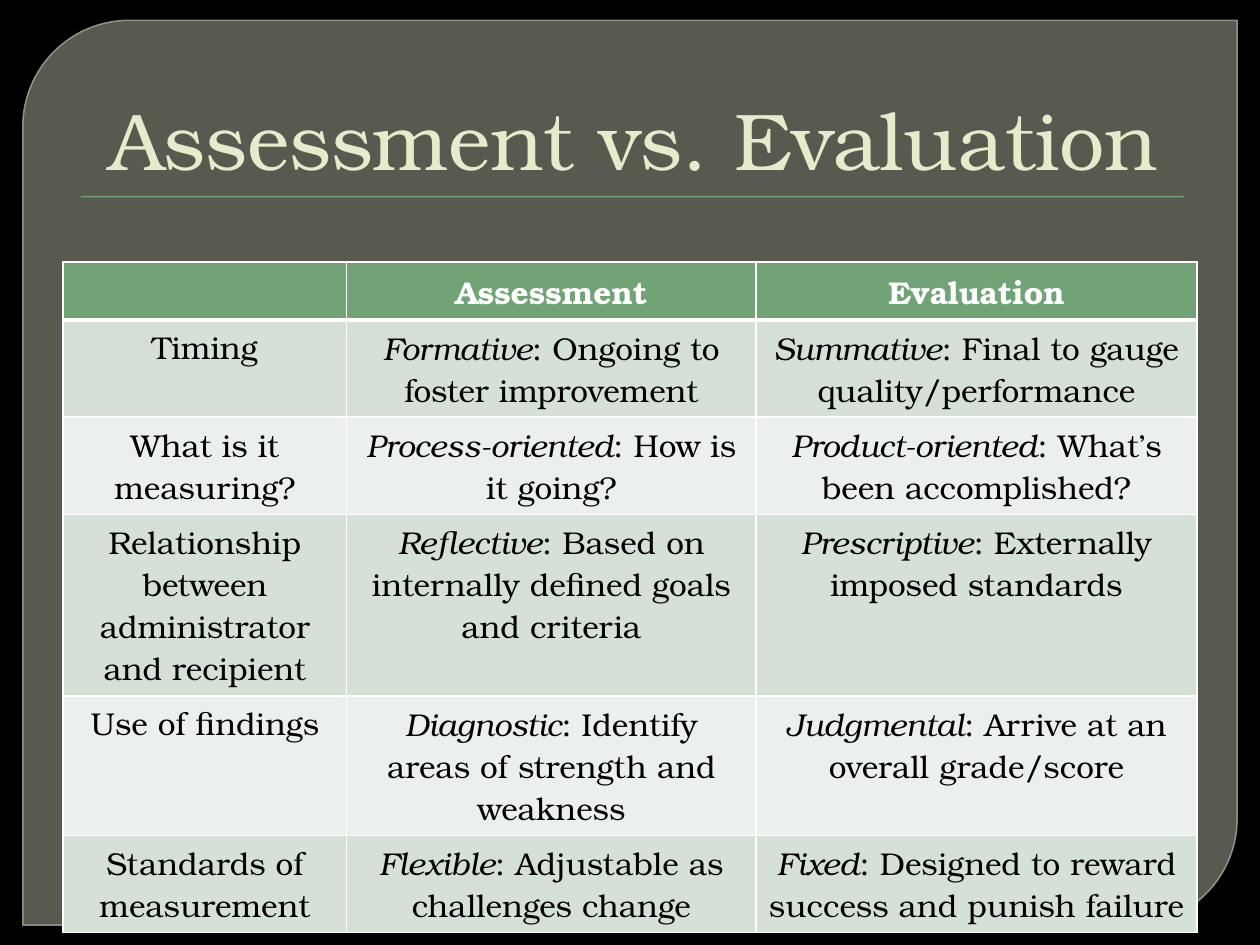
import pptx
import pptx.util
import pptx.dml.color
import pptx.enum.shapes
import pptx.enum.text
import pptx.oxml
import pptx.oxml.ns
from pptx.util import Cm

FONT = "TeX Gyre Bonum"
TITLE = "Assessment vs. Evaluation"
HEADS = ["", "Assessment", "Evaluation"]
ROWS = [
    ("Timing",
     ("Formative", "Ongoing to foster improvement"),
     ("Summative", "Final to gauge quality/performance")),
    ("What is it measuring?",
     ("Process-oriented", "How is it going?"),
     ("Product-oriented", "What’s been accomplished?")),
    ("Relationship between administrator and recipient",
     ("Reflective", "Based on internally defined goals and criteria"),
     ("Prescriptive", "Externally imposed standards")),
    ("Use of findings",
     ("Diagnostic", "Identify areas of strength and weakness"),
     ("Judgmental", "Arrive at an overall grade/score")),
    ("Standards of measurement",
     ("Flexible", "Adjustable as challenges change"),
     ("Fixed", "Designed to reward success and punish failure")),
]
LINES = [2, 2, 4, 3, 2]
GREEN, WHITE, BLACK = "72A376", "FFFFFF", "000000"
BANDS = ["D5E0D6", "EBF0EC"]
WIDTHS = [5.72, 8.25, 8.89]
HEIGHTS = [1.17] + [0.85 * count + 0.26 for count in LINES]
NS = pptx.oxml.ns.nsdecls("a")


def rgb(code):
    return pptx.dml.color.RGBColor.from_string(code)


def paint(fill, code, alpha=100):
    fill.solid()
    fill.fore_color.rgb = rgb(code)
    if alpha < 100:
        for node in fill._xPr.iter(pptx.oxml.ns.qn("a:srgbClr")):
            node.append(pptx.oxml.parse_xml(
                f'<a:alpha {NS} val="{alpha * 1000}"/>'))


def write(para, runs, size, color, bold=False):
    para.alignment = pptx.enum.text.PP_ALIGN.CENTER
    for text, slant in runs:
        run = para.add_run()
        run.text = text
        font = run.font
        font.name, font.size = FONT, pptx.util.Pt(size)
        font.bold, font.italic = bold, slant
        font.color.rgb = rgb(color)


def border(cell, head, under):
    props = cell._tc.get_or_add_tcPr()
    thick = {"L": 1, "R": 1, "T": 3 if under else 1, "B": 3 if head else 1}
    for side, pts in thick.items():
        props.append(pptx.oxml.parse_xml(
            f'<a:ln{side} {NS} w="{pts * 12700}"><a:solidFill>'
            f'<a:srgbClr val="{WHITE}"/></a:solidFill></a:ln{side}>'))


def parts(item):
    if isinstance(item, str):
        return [(item, False)] if item else []
    term, note = item
    return [(term, True), (": " + note, False)]


def main():
    deck = pptx.Presentation()
    deck.slide_width, deck.slide_height = Cm(25.4), Cm(19.05)
    slide = deck.slides.add_slide(deck.slide_layouts[6])
    paint(slide.background.fill, BLACK)
    shapes = slide.shapes
    kinds = pptx.enum.shapes.MSO_SHAPE

    panel = shapes.add_shape(kinds.ROUND_2_DIAG_RECTANGLE,
                             Cm(0.46), Cm(0.41), Cm(24.48), Cm(18.24))
    panel.adjustments[0], panel.adjustments[1] = 0.118, 0
    panel.shadow.inherit = False
    paint(panel.fill, "888B7B", 65)
    paint(panel.line.fill, "9DA090", 88)
    panel.line.width = pptx.util.Pt(0.87)

    rule = shapes.add_shape(kinds.RECTANGLE,
                            Cm(1.63), Cm(3.95), Cm(22.23), Cm(0.03))
    rule.shadow.inherit = False
    paint(rule.fill, GREEN)
    rule.line.fill.background()

    title = shapes.add_textbox(Cm(1.27), Cm(0.71), Cm(22.86), Cm(3.18))
    frame = title.text_frame
    frame.word_wrap = True
    frame.vertical_anchor = pptx.enum.text.MSO_ANCHOR.BOTTOM
    frame.margin_left, frame.margin_bottom = Cm(0.4), Cm(0.13)
    write(frame.paragraphs[0], [(TITLE, False)], 46, "E7EACB")

    grid = shapes.add_table(len(HEIGHTS), len(WIDTHS), Cm(1.27), Cm(5.28),
                            Cm(sum(WIDTHS)), Cm(sum(HEIGHTS))).table
    for col, width in zip(grid.columns, WIDTHS):
        col.width = Cm(width)
    for row, height in zip(grid.rows, HEIGHTS):
        row.height = Cm(height)
    for r, row in enumerate([HEADS] + ROWS):
        head = r == 0
        for c, item in enumerate(row):
            cell = grid.cell(r, c)
            border(cell, head, r == 1)
            paint(cell.fill, GREEN if head else BANDS[(r - 1) % 2])
            write(cell.text_frame.paragraphs[0], parts(item), 18,
                  WHITE if head else BLACK, head)

    deck.save("out.pptx")


if __name__ == "__main__":
    main()
